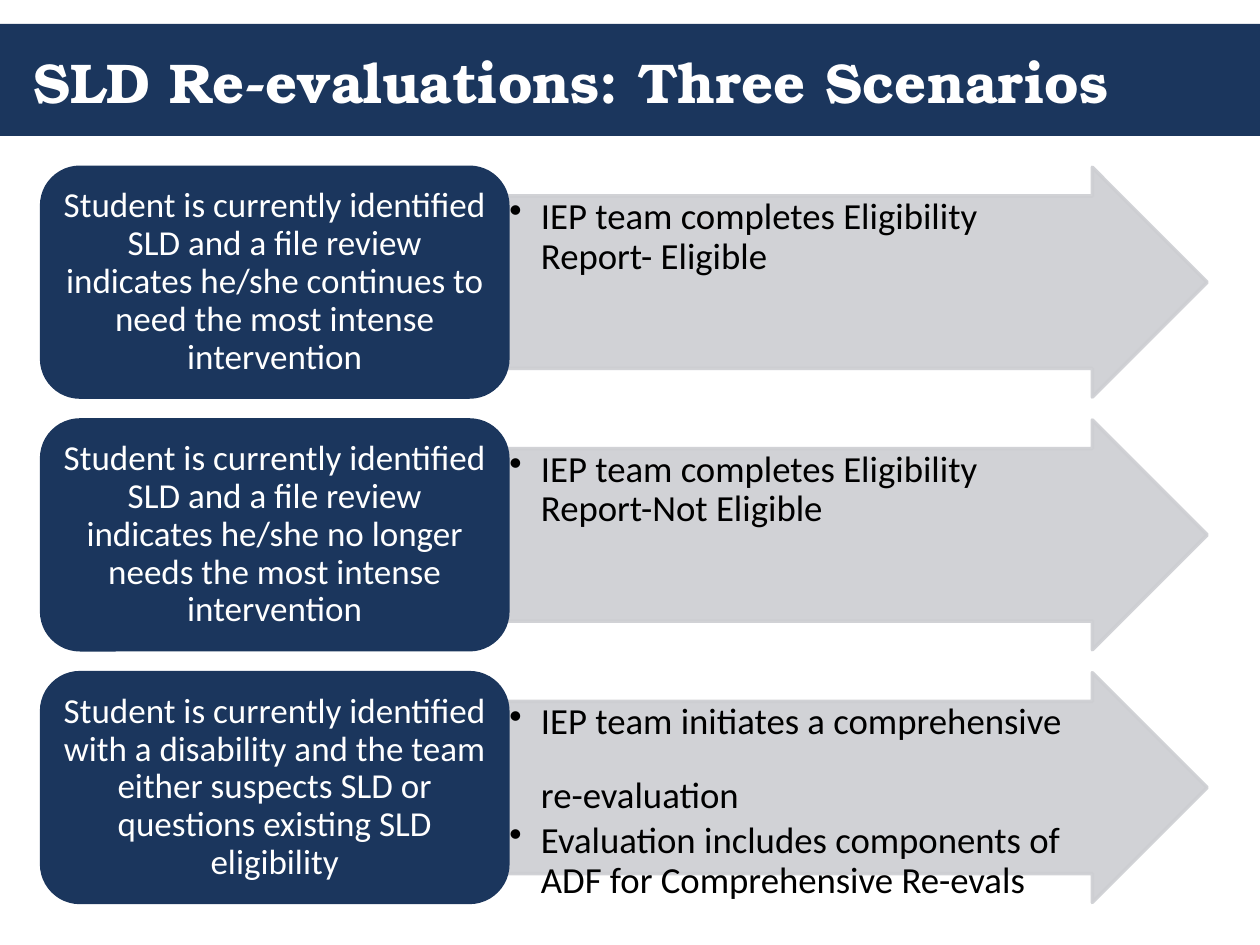
from pptx import Presentation
from pptx.dml.color import RGBColor
from pptx.enum.shapes import MSO_SHAPE
from pptx.enum.text import MSO_ANCHOR, MSO_AUTO_SIZE, PP_ALIGN
from pptx.oxml.ns import qn
from pptx.util import Pt
from lxml.etree import SubElement

COLORS = {"navy": "1B365D", "gray": "CDCED2", "white": "FFFFFF", "black": "000000"}
ROWS = [
    ("Student is currently identified SLD and a file review indicates "
     "he/she continues to need the most intense intervention",
     [["IEP team completes Eligibility Report- Eligible"]]),
    ("Student is currently identified SLD and a file review indicates "
     "he/she no longer needs the most intense intervention",
     [["IEP team completes Eligibility Report-Not Eligible"]]),
    ("Student is currently identified with a disability and the team "
     "either suspects SLD or questions existing SLD eligibility",
     [["IEP team initiates a comprehensive ", "re-evaluation"],
      ["Evaluation includes components of ADF for Comprehensive Re-evals"]]),
]
TOP, STEP, HIGH = 95.6, 144.4, 131.3
LEFT, MID, WIDE, LONG = 23.8, 290.2, 266.4, 399.6


def draw(kind, x, y, w, h, color):
    shape = slide.shapes.add_shape(kind, Pt(x), Pt(y), Pt(w), Pt(h))
    shape.shadow.inherit = False
    shape.fill.solid()
    shape.fill.fore_color.rgb = RGBColor.from_string(COLORS[color])
    shape.line.color.rgb = RGBColor.from_string(COLORS[color])
    shape.line.width = Pt(2)
    return shape


def write(para, text, size, color, face="Calibri"):
    run = para.add_run()
    run.text = text
    run.font.size = Pt(size)
    run.font.name = face
    run.font.color.rgb = RGBColor.from_string(COLORS[color])
    return run


prs = Presentation()
prs.slide_width, prs.slide_height = Pt(720), Pt(540)
slide = prs.slides.add_slide(prs.slide_layouts[5])

bar = draw(MSO_SHAPE.RECTANGLE, 0, 13.7, 720, 64, "navy")
bar.line.fill.background()
title = slide.shapes.title
bar.element.addnext(title.element)
title.left, title.top, title.width, title.height = Pt(12.2), Pt(13.7), Pt(696), Pt(64.8)
frame = title.text_frame
frame.auto_size = MSO_AUTO_SIZE.NONE
frame.word_wrap = True
frame.vertical_anchor = MSO_ANCHOR.MIDDLE
para = frame.paragraphs[0]
para.alignment = PP_ALIGN.LEFT
write(para, "SLD Re-evaluations: Three Scenarios", 32, "white", "TeX Gyre Bonum").font.bold = True

for row, (case, steps) in enumerate(ROWS):
    top = TOP + row * STEP

    arrow = draw(MSO_SHAPE.RIGHT_ARROW, MID, top, LONG, HIGH, "gray")
    arrow.adjustments[0], arrow.adjustments[1] = 0.75, 0.5
    for tone in list(arrow.element.spPr.iter(qn("a:srgbClr"))):
        SubElement(tone, qn("a:alpha"), val="90000")
    frame = arrow.text_frame
    frame.word_wrap = True
    frame.vertical_anchor = MSO_ANCHOR.TOP
    frame.margin_left = frame.margin_top = frame.margin_bottom = Pt(0.9)
    frame.margin_right = Pt(33)
    for num, lines in enumerate(steps):
        para = frame.add_paragraph() if num else frame.paragraphs[0]
        props = para._p.get_or_add_pPr()
        props.set("marL", str(Pt(18)))
        props.set("indent", str(-Pt(18)))
        SubElement(props, qn("a:buChar"), char="•")
        para.level = 1
        para.alignment = PP_ALIGN.LEFT
        para.line_spacing = 0.9
        para.space_after = Pt(3)
        for part, line in enumerate(lines):
            if part:
                para.add_line_break()
            write(para, line, 21, "black")

    box = draw(MSO_SHAPE.ROUNDED_RECTANGLE, LEFT, top, WIDE, HIGH, "navy")
    frame = box.text_frame
    frame.word_wrap = True
    frame.vertical_anchor = MSO_ANCHOR.MIDDLE
    frame.margin_left = frame.margin_right = Pt(6)
    frame.margin_top = frame.margin_bottom = Pt(3)
    para = frame.paragraphs[0]
    para.alignment = PP_ALIGN.CENTER
    para.line_spacing = 0.9
    write(para, case, 20, "white")

prs.save("out.pptx")
